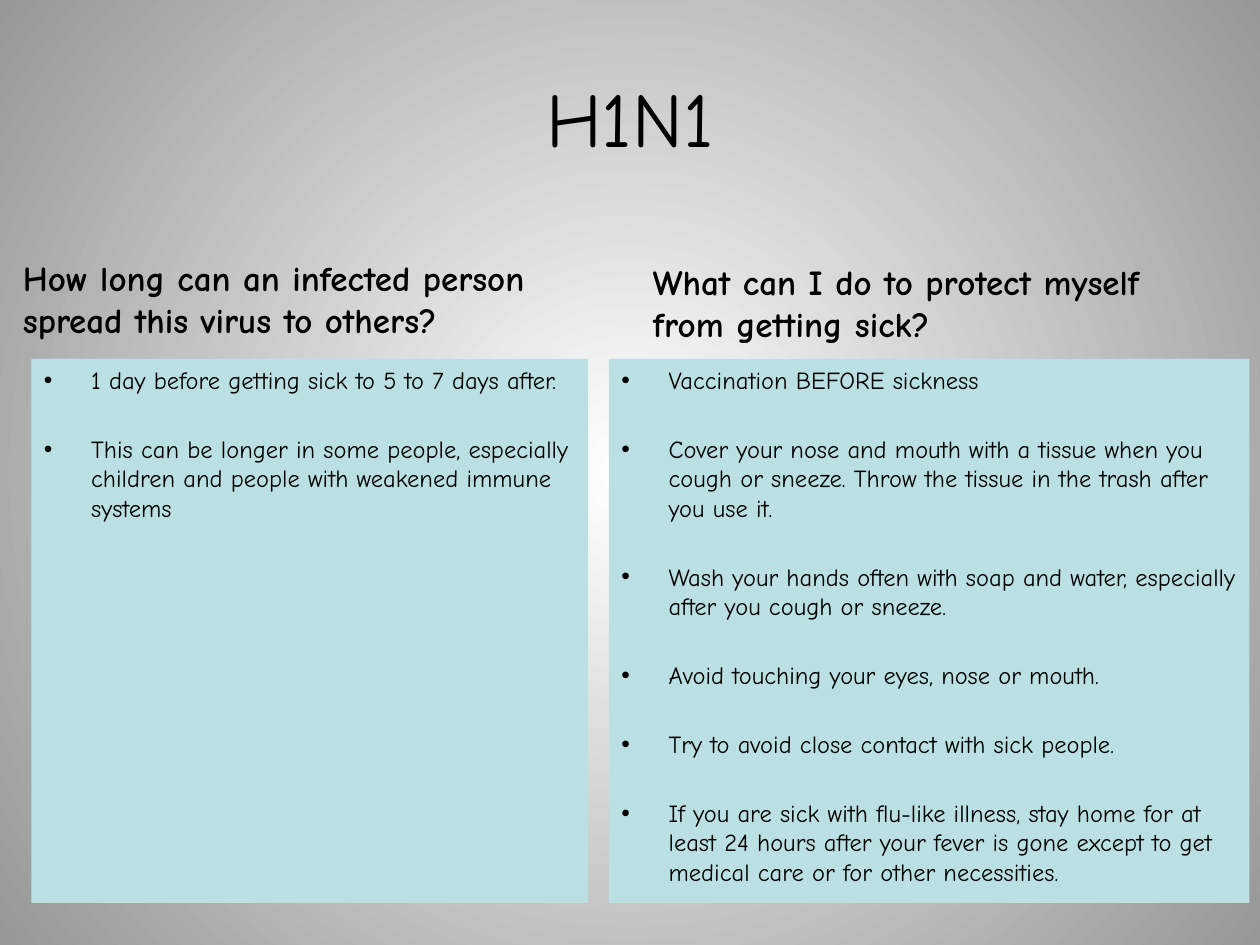
from dataclasses import dataclass

import lxml.etree
import pptx
import pptx.dml.color
import pptx.enum.shapes
import pptx.enum.text
import pptx.oxml.ns
import pptx.util

Pt = pptx.util.Pt
RGB = pptx.dml.color.RGBColor.from_string
qn = pptx.oxml.ns.qn
Anchor = pptx.enum.text.MSO_ANCHOR
Align = pptx.enum.text.PP_ALIGN


@dataclass(frozen=True)
class Theme:
    font: str = "Comic Neue"
    ink: str = "000000"
    panel: str = "BBE0E3"
    glow: str = "FFFFFF"
    edge: str = "979797"
    title: int = 44
    heading: int = 20
    body: int = 14


THEME = Theme()

SPREAD_POINTS = [
    "1 day before getting sick to 5 to 7 days after.",
    "This can be longer in some people, especially children and people with weakened immune systems",
]
PROTECT_POINTS = [
    "Vaccination BEFORE sickness",
    "Cover your nose and mouth with a tissue when you cough or sneeze. "
    "Throw the tissue in the trash after you use it.",
    "Wash your hands often with soap and water, especially after you cough or sneeze.",
    "Avoid touching your eyes, nose or mouth.",
    "Try to avoid close contact with sick people.",
    "If you are sick with flu-like illness, stay home for at least 24 hours after your fever "
    "is gone except to get medical care or for other necessities.",
]


def paint_background(page):
    """Fill the page with a circular gradient, light in the middle."""
    fill = page.background.fill
    fill.gradient()
    for stop, color in zip(fill.gradient_stops, (THEME.glow, THEME.edge)):
        stop.color.rgb = RGB(color)
    gradient = next(page.element.iter(qn("a:gradFill")))
    gradient.remove(gradient.find(qn("a:lin")))
    circle = lxml.etree.SubElement(gradient, qn("a:path"), path="circle")
    lxml.etree.SubElement(circle, qn("a:fillToRect"), l="50000", t="50000", r="50000", b="50000")


def style_paragraph(para, size, bold=False, align=Align.LEFT):
    para.alignment = align
    para.font.name = THEME.font
    para.font.size = Pt(size)
    para.font.bold = bold
    para.font.color.rgb = RGB(THEME.ink)


def add_label(page, box, text, size, anchor, bold=False, align=Align.LEFT):
    frame = page.shapes.add_textbox(*map(Pt, box)).text_frame
    frame.word_wrap = True
    frame.vertical_anchor = anchor
    frame.text = text
    style_paragraph(frame.paragraphs[0], size, bold, align)


def add_bullet(para, indent):
    properties = para._p.get_or_add_pPr()
    properties.set("marL", str(Pt(indent)))
    properties.set("indent", str(-Pt(indent)))
    lxml.etree.SubElement(properties, qn("a:buFont"), typeface="Arial")
    lxml.etree.SubElement(properties, qn("a:buChar"), char="•")


def add_bullet_panel(page, box, points):
    panel = page.shapes.add_shape(pptx.enum.shapes.MSO_SHAPE.RECTANGLE, *map(Pt, box))
    panel.shadow.inherit = False
    panel.fill.solid()
    panel.fill.fore_color.rgb = RGB(THEME.panel)
    panel.line.fill.background()
    frame = panel.text_frame
    frame.word_wrap = True
    frame.vertical_anchor = Anchor.TOP
    frame.text = "\n".join(points)
    for para in frame.paragraphs:
        style_paragraph(para, THEME.body)
        para.space_after = Pt(22.6)
        add_bullet(para, 27)


def add_question(page, heading_box, panel_box, question, points):
    add_label(page, heading_box, question, THEME.heading, Anchor.BOTTOM, bold=True)
    add_bullet_panel(page, panel_box, points)


def main():
    deck = pptx.Presentation()
    deck.slide_width, deck.slide_height = Pt(720), Pt(540)
    page = deck.slides.add_slide(deck.slide_layouts[6])
    paint_background(page)
    add_label(page, (0, 21.6, 720, 90), "H1N1", THEME.title, Anchor.MIDDLE, align=Align.CENTER)
    panel_top, panel_height = 205, 311
    add_question(
        page, (6, 147.6, 348, 50.4), (18, panel_top, 318, panel_height),
        "How long can an infected person spread this virus to others?", SPREAD_POINTS,
    )
    add_question(
        page, (366, 150, 318, 50.4), (348, panel_top, 366, panel_height),
        "What can I do to protect myself from getting sick?", PROTECT_POINTS,
    )
    deck.save("out.pptx")


if __name__ == "__main__":
    main()
